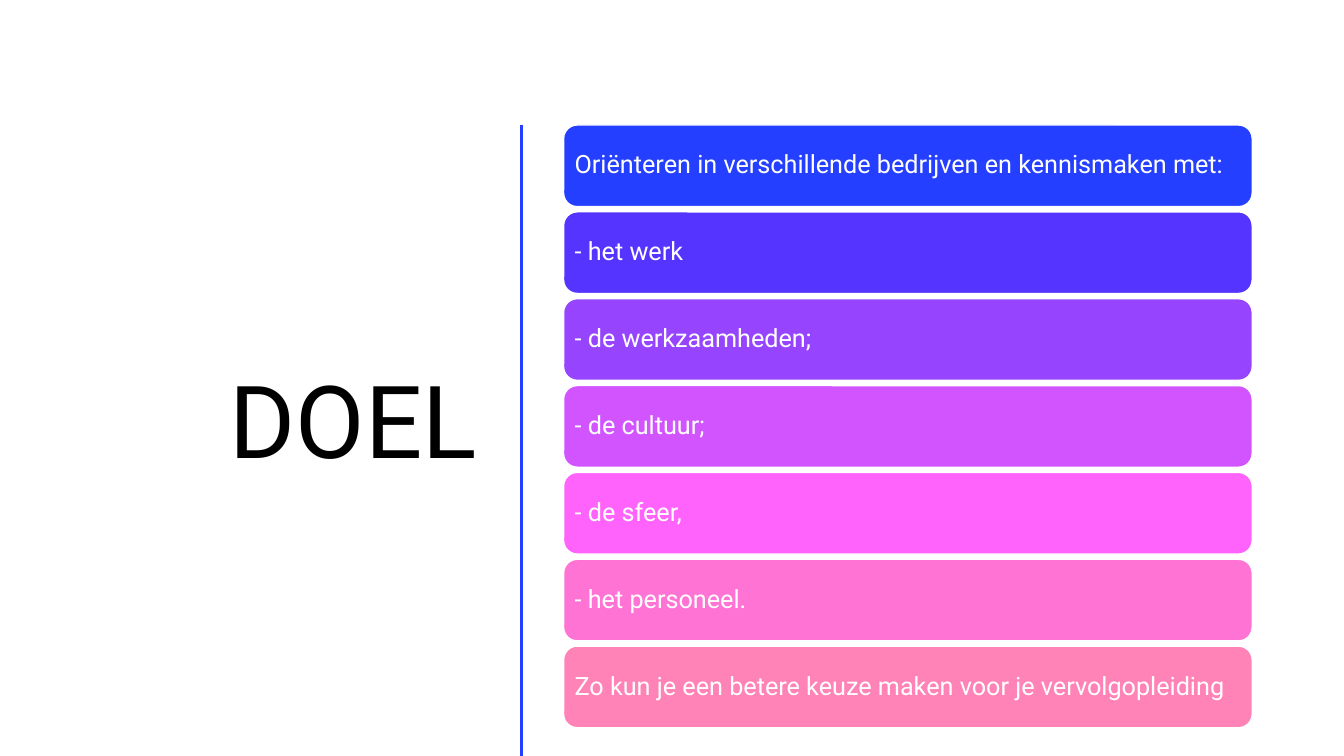
from pptx import Presentation
from pptx.dml.color import RGBColor
from pptx.enum.shapes import MSO_CONNECTOR, MSO_SHAPE
from pptx.enum.text import MSO_ANCHOR, MSO_AUTO_SIZE, PP_ALIGN
from pptx.oxml.ns import qn
from pptx.util import Inches, Pt
from lxml import etree

STRAIGHT, ROUNDED = MSO_CONNECTOR.STRAIGHT, MSO_SHAPE.ROUNDED_RECTANGLE
MIDDLE, NO_AUTOFIT = MSO_ANCHOR.MIDDLE, MSO_AUTO_SIZE.NONE
LEFT, RIGHT = PP_ALIGN.LEFT, PP_ALIGN.RIGHT

BLACK = RGBColor(0x00, 0x00, 0x00)
WHITE = RGBColor(0xFF, 0xFF, 0xFF)
BLUE = RGBColor(0x24, 0x3F, 0xFF)
INDIGO = RGBColor(0x55, 0x34, 0xFF)
PURPLE = RGBColor(0x97, 0x44, 0xFF)
ORCHID = RGBColor(0xD1, 0x54, 0xFF)
MAGENTA = RGBColor(0xFF, 0x63, 0xFC)
PINK = RGBColor(0xFF, 0x73, 0xD5)
SALMON = RGBColor(0xFF, 0x83, 0xB6)

SLIDE_W, SLIDE_H = Inches(13.33), Inches(7.5)
TITLE_BOX = (Inches(0.52), Inches(1.17), Inches(4.31), Inches(6.11))
GOALS_BOX = (Inches(5.59), Inches(1.24), Inches(6.83), Inches(5.98))
DIVIDER_X = Inches(5.17)
BAR_SHARE = 0.94  # bar height as a share of the row pitch
BAR_INSET = Inches(0.07)

TITLE_FONT = {"name": "Roboto", "size": Pt(72)}
GOAL_FONT = {"name": "Roboto", "size": Pt(18)}
BAR_FRAME = {
    "word_wrap": True,
    "vertical_anchor": MIDDLE,
    "margin_left": BAR_INSET,
    "margin_right": BAR_INSET,
    "margin_top": BAR_INSET,
    "margin_bottom": BAR_INSET,
}
TITLE_FRAME = {"word_wrap": True, "vertical_anchor": MIDDLE, "auto_size": NO_AUTOFIT}

GOALS = [
    ("Oriënteren in verschillende bedrijven en kennismaken met:", BLUE),
    ("- het werk", INDIGO),
    ("- de werkzaamheden;", PURPLE),
    ("- de cultuur;", ORCHID),
    ("- de sfeer,", MAGENTA),
    ("- het personeel.", PINK),
    ("Zo kun je een betere keuze maken voor je vervolgopleiding", SALMON),
]


def set_attributes(target, values):
    for name, value in values.items():
        setattr(target, name, value)


def write_text(shape, text, frame_format, font_format, color, alignment):
    frame = shape.text_frame
    set_attributes(frame, frame_format)
    paragraph = frame.paragraphs[0]
    set_attributes(paragraph, {"alignment": alignment, "line_spacing": 0.9})
    run = paragraph.add_run()
    run.text = text
    set_attributes(run.font, font_format)
    run.font.color.rgb = color


def add_heading(slide, box):
    title = slide.shapes.title
    set_attributes(title, dict(zip(("left", "top", "width", "height"), box)))
    write_text(title, "DOEL", TITLE_FRAME, TITLE_FONT, BLACK, RIGHT)


def add_divider(slide, x, top, bottom):
    divider = slide.shapes.add_connector(STRAIGHT, x, top, x, bottom)
    divider.line.color.rgb = BLUE
    divider.line.width = Pt(2)
    etree.SubElement(divider._element.spPr, qn("a:effectLst"))


def add_goals(slide, box):
    left, top, width, height = box
    # The last row has no gap below it
    pitch = height / (len(GOALS) - 1 + BAR_SHARE)
    for row, (text, color) in enumerate(GOALS):
        bar = slide.shapes.add_shape(
            ROUNDED, left, round(top + row * pitch), width, round(pitch * BAR_SHARE))
        bar.shadow.inherit = False
        bar.fill.solid()
        bar.fill.fore_color.rgb = color
        bar.line.color.rgb = WHITE
        bar.line.width = Pt(1)
        write_text(bar, text, BAR_FRAME, GOAL_FONT, WHITE, LEFT)


def build_goal_slide(presentation):
    slide = presentation.slides.add_slide(presentation.slide_layouts[5])
    slide.background.fill.solid()
    slide.background.fill.fore_color.rgb = WHITE
    add_heading(slide, TITLE_BOX)
    add_divider(slide, DIVIDER_X, GOALS_BOX[1], SLIDE_H)
    add_goals(slide, GOALS_BOX)


def main():
    presentation = Presentation()
    presentation.slide_width, presentation.slide_height = SLIDE_W, SLIDE_H
    build_goal_slide(presentation)
    presentation.save("out.pptx")


if __name__ == "__main__":
    main()
